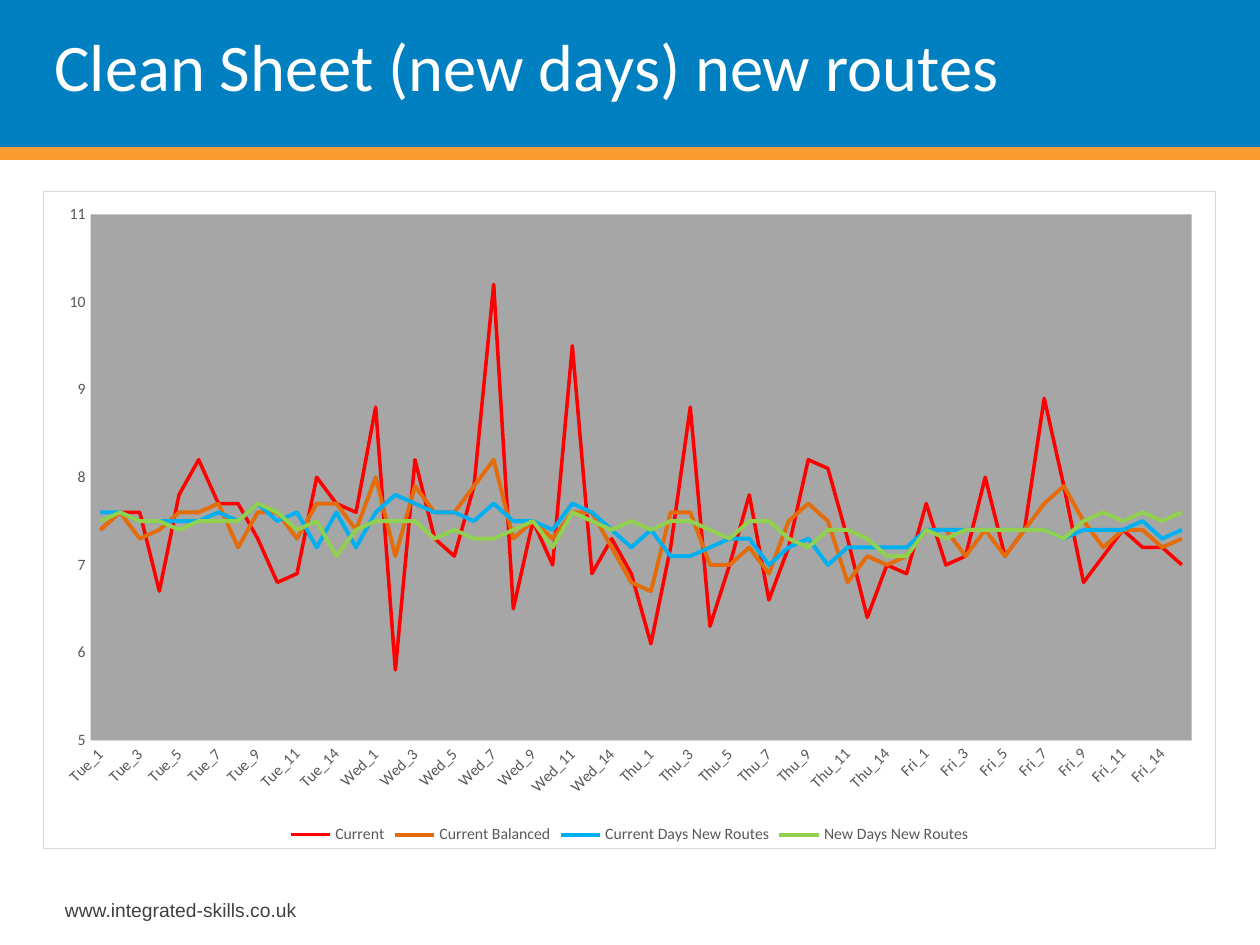
import pptx
import pptx.chart.data
import pptx.dml.color
import pptx.enum.chart
import pptx.enum.shapes
import pptx.enum.text
import pptx.oxml
import pptx.oxml.ns
import pptx.util

Pt = pptx.util.Pt
qn = pptx.oxml.ns.qn
NS = pptx.oxml.ns.nsdecls("a", "c")

TITLE = "Clean Sheet (new days) new routes"
FOOTER = "www.integrated-skills.co.uk"
DAYS = ["Tue", "Wed", "Thu", "Fri"]
ROUTES = [*range(1, 13), 14, 15]

# name, colour, line width, one row of hours per day
SERIES = [
    ("Current", "FF0000", 2, [
        [7.4, 7.6, 7.6, 6.7, 7.8, 8.2, 7.7, 7.7, 7.3, 6.8, 6.9, 8, 7.7, 7.6],
        [8.8, 5.8, 8.2, 7.3, 7.1, 7.9, 10.2, 6.5, 7.5, 7, 9.5, 6.9, 7.3, 6.9],
        [6.1, 7.2, 8.8, 6.3, 7, 7.8, 6.6, 7.2, 8.2, 8.1, 7.3, 6.4, 7, 6.9],
        [7.7, 7, 7.1, 8, 7.1, 7.4, 8.9, 7.9, 6.8, 7.1, 7.4, 7.2, 7.2, 7]]),
    ("Current Balanced", "E46C0A", 2.25, [
        [7.4, 7.6, 7.3, 7.4, 7.6, 7.6, 7.7, 7.2, 7.6, 7.6, 7.3, 7.7, 7.7, 7.4],
        [8, 7.1, 7.9, 7.6, 7.6, 7.9, 8.2, 7.3, 7.5, 7.3, 7.6, 7.6, 7.2, 6.8],
        [6.7, 7.6, 7.6, 7, 7, 7.2, 6.9, 7.5, 7.7, 7.5, 6.8, 7.1, 7, 7.1],
        [7.4, 7.4, 7.1, 7.4, 7.1, 7.4, 7.7, 7.9, 7.5, 7.2, 7.4, 7.4, 7.2, 7.3]]),
    ("Current Days New Routes", "00B0F0", 2.25, [
        [7.6, 7.6, 7.5, 7.5, 7.5, 7.5, 7.6, 7.5, 7.7, 7.5, 7.6, 7.2, 7.6, 7.2],
        [7.6, 7.8, 7.7, 7.6, 7.6, 7.5, 7.7, 7.5, 7.5, 7.4, 7.7, 7.6, 7.4, 7.2],
        [7.4, 7.1, 7.1, 7.2, 7.3, 7.3, 7, 7.2, 7.3, 7, 7.2, 7.2, 7.2, 7.2],
        [7.4, 7.4, 7.4, 7.4, 7.4, 7.4, 7.4, 7.3, 7.4, 7.4, 7.4, 7.5, 7.3, 7.4]]),
    ("New Days New Routes", "92D050", 2.25, [
        [7.5, 7.6, 7.5, 7.5, 7.4, 7.5, 7.5, 7.5, 7.7, 7.6, 7.4, 7.5, 7.1, 7.4],
        [7.5, 7.5, 7.5, 7.3, 7.4, 7.3, 7.3, 7.4, 7.5, 7.2, 7.6, 7.5, 7.4, 7.5],
        [7.4, 7.5, 7.5, 7.4, 7.3, 7.5, 7.5, 7.3, 7.2, 7.4, 7.4, 7.3, 7.1, 7.1],
        [7.4, 7.3, 7.4, 7.4, 7.4, 7.4, 7.4, 7.3, 7.5, 7.6, 7.5, 7.6, 7.5, 7.6]]),
]


def rgb(color):
    return pptx.dml.color.RGBColor.from_string(color)


def set_font(font, name, size, color):
    font.name, font.size = name, Pt(size)
    font.color.rgb = rgb(color)


def add_text(s, text, box, font, anchor):
    tf = s.shapes.add_textbox(*map(Pt, box)).text_frame
    tf.word_wrap = True
    tf.vertical_anchor = anchor
    p = tf.paragraphs[0]
    p.text = text
    set_font(p.font, *font)


def area_format(fill, line):
    """Fill and outline for a chart part that has no public format."""
    return pptx.oxml.parse_xml(
        f'<c:spPr {NS}><a:solidFill><a:srgbClr val="{fill}"/></a:solidFill>'
        f'<a:ln w="9525">{line}</a:ln></c:spPr>')


def add_header(s):
    band = s.shapes.add_shape(pptx.enum.shapes.MSO_SHAPE.RECTANGLE,
                              0, 0, Pt(720), Pt(90))
    band.shadow.inherit = False
    band.fill.solid()
    band.fill.fore_color.rgb = rgb("0080C0")
    band.line.fill.background()
    rule = s.shapes.add_connector(pptx.enum.shapes.MSO_CONNECTOR.STRAIGHT,
                                  0, Pt(87.8), Pt(720), Pt(87.8))
    rule.line.color.rgb = rgb("F89C31")
    rule.line.width = Pt(7.75)
    rule._element.spPr.append(pptx.oxml.parse_xml(f"<a:effectLst {NS}/>"))


def add_hours_chart(s):
    enum = pptx.enum.chart
    data = pptx.chart.data.CategoryChartData(number_format="0.0")
    data.categories = [f"{day}_{n}" for day in DAYS for n in ROUTES]
    for name, _, _, rows in SERIES:
        data.add_series(name, sum(rows, []))
    chart = s.shapes.add_chart(enum.XL_CHART_TYPE.LINE, Pt(24.6), Pt(109),
                               Pt(670.2), Pt(376.4), data).chart
    chart.has_title = False
    set_font(chart.font, "Calibri", 10, "000000")
    chart.has_legend = True
    chart.legend.position = enum.XL_LEGEND_POSITION.BOTTOM
    chart.legend.include_in_layout = False
    set_font(chart.legend.font, "Calibri", 9, "595959")

    plot = chart.plots[0]
    plot.vary_by_categories = False
    for series, (_, color, width, _) in zip(plot.series, SERIES):
        series.smooth = False
        series.marker.style = enum.XL_MARKER_STYLE.NONE
        series.format.line.color.rgb = rgb(color)
        series.format.line.width = Pt(width)

    cat, val = chart.category_axis, chart.value_axis
    for axis in (cat, val):
        axis.has_major_gridlines = False
        axis.major_tick_mark = axis.minor_tick_mark = enum.XL_TICK_MARK.NONE
        set_font(axis.tick_labels.font, "Calibri", 9, "595959")
    cat.format.line.color.rgb = rgb("D9D9D9")
    cat.format.line.width = Pt(0.75)
    val.format.line.fill.background()
    val.minimum_scale, val.maximum_scale, val.major_unit = 5, 11, 1
    val.tick_labels.number_format = "0"
    val.tick_labels.number_format_is_linked = False

    # Slanted labels on every second route
    root = chart.element
    cat_ax = root.find(".//" + qn("c:catAx"))
    body = cat_ax.find(qn("c:txPr")).find(qn("a:bodyPr"))
    body.set("rot", "-2700000")
    body.set("vert", "horz")
    cat_ax.find(qn("c:noMultiLvlLbl")).addprevious(
        pptx.oxml.parse_xml(f'<c:tickLblSkip {NS} val="2"/>'))

    # Plot position, then plot and chart backgrounds
    area = root.find(".//" + qn("c:plotArea"))
    for layout in area.findall(qn("c:layout")):
        area.remove(layout)
    sizes = "".join(f'<c:{tag} val="{v}"/>' for tag, v in
                    [("x", 0.04), ("y", 0.035), ("w", 0.94), ("h", 0.8)])
    area.insert(0, pptx.oxml.parse_xml(
        f'<c:layout {NS}><c:manualLayout><c:layoutTarget val="inner"/>'
        f'<c:xMode val="edge"/><c:yMode val="edge"/>{sizes}'
        '</c:manualLayout></c:layout>'))
    area.append(area_format("A6A6A6", "<a:noFill/>"))
    root.find(qn("c:chart")).addnext(area_format(
        "FFFFFF", '<a:solidFill><a:srgbClr val="D9D9D9"/></a:solidFill>'))


def main():
    prs = pptx.Presentation()
    prs.slide_width, prs.slide_height = Pt(720), Pt(540)
    s = prs.slides.add_slide(prs.slide_layouts[6])
    anchor = pptx.enum.text.MSO_ANCHOR
    add_text(s, FOOTER, (30, 510, 200, 21), ("Arial", 11, "404040"), anchor.TOP)
    add_header(s)
    add_hours_chart(s)
    add_text(s, TITLE, (24, 1, 624, 72), ("Calibri", 38, "FFFFFF"), anchor.MIDDLE)
    prs.save("out.pptx")


if __name__ == "__main__":
    main()
